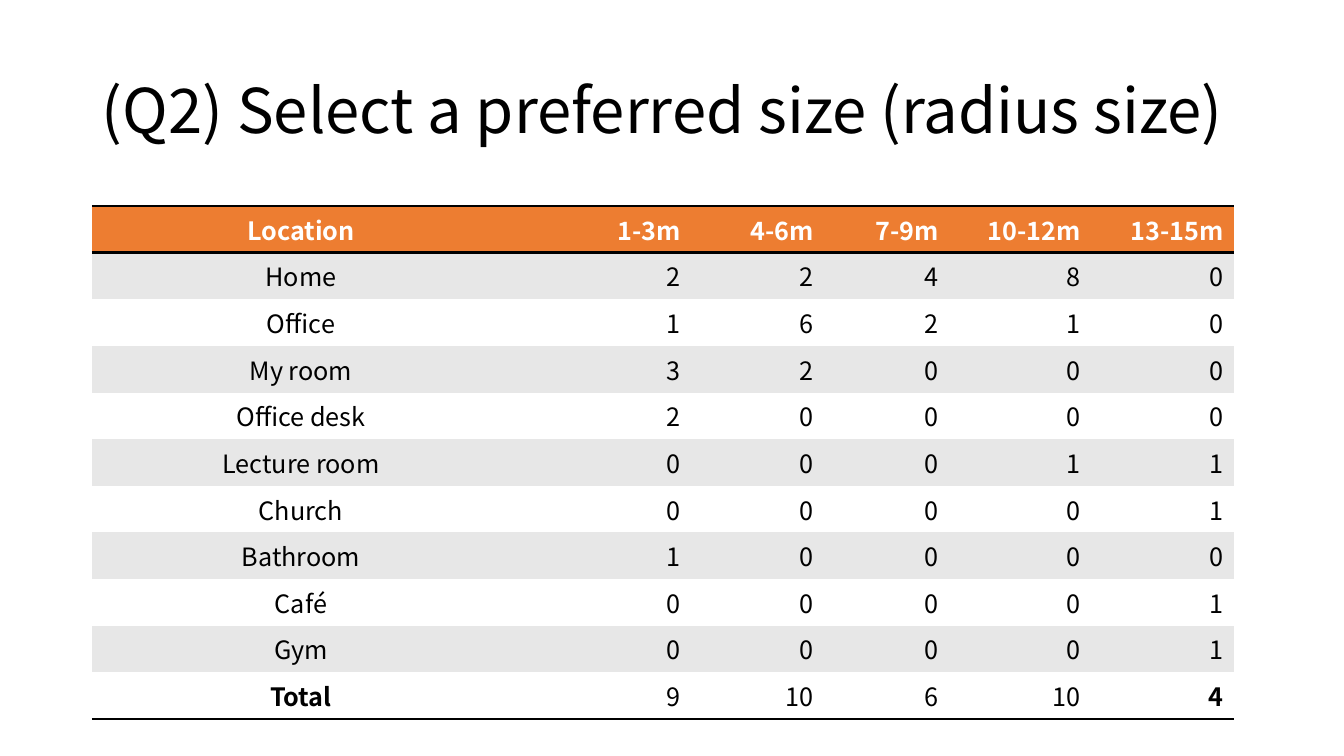
from lxml.etree import SubElement
from pptx import Presentation
from pptx.dml.color import RGBColor
from pptx.enum.text import MSO_ANCHOR, PP_ALIGN
from pptx.oxml.ns import qn
from pptx.util import Pt

EMU_PER_PX = 914400 / 100.8
FONT = "Noto Sans CJK KR"
BLACK, WHITE, ORANGE, GREY = "000000", "FFFFFF", "ED7D31", "E7E7E7"
PLAIN_TABLE_STYLE = "{2D5ABB26-0587-4C30-8999-92F81FD0307C}"

COLUMN_WIDTHS = [418, 181, 133, 125, 142, 143]
TABLE_HEIGHT = 513
ROWS = [
    ["Location", "1-3m", "4-6m", "7-9m", "10-12m", "13-15m"],
    ["Home", 2, 2, 4, 8, 0],
    ["Office", 1, 6, 2, 1, 0],
    ["My room", 3, 2, 0, 0, 0],
    ["Office desk", 2, 0, 0, 0, 0],
    ["Lecture room", 0, 0, 0, 1, 1],
    ["Church", 0, 0, 0, 0, 1],
    ["Bathroom", 1, 0, 0, 0, 0],
    ["Café", 0, 0, 0, 0, 1],
    ["Gym", 0, 0, 0, 0, 1],
    ["Total", 9, 10, 6, 10, 4],
]


def px(length):
    return round(length * EMU_PER_PX)


def color(value):
    return RGBColor.from_string(value)


def write(frame, text, size=18, fill=BLACK, bold=False, align=PP_ALIGN.LEFT, spacing=1.0):
    para = frame.paragraphs[0]
    para.alignment = align
    para.line_spacing = spacing
    span = para.add_run()
    span.text = text
    span.font.name = FONT
    span.font.size = Pt(size)
    span.font.bold = bold
    span.font.color.rgb = color(fill)


def add_title(page, text, left, top, width, height):
    box = page.shapes.add_textbox(px(left), px(top), px(width), px(height))
    box.text_frame.word_wrap = True
    box.text_frame.vertical_anchor = MSO_ANCHOR.MIDDLE
    write(box.text_frame, text, size=44, spacing=0.9)


def add_border(cell, side, width=2):
    line = SubElement(cell._tc.get_or_add_tcPr(), qn(f"a:ln{side}"), w=str(Pt(width)))
    SubElement(SubElement(line, qn("a:solidFill")), qn("a:srgbClr"), val=BLACK)


def fill_cell(cell, value, row, column):
    header, total = row == 0, row == len(ROWS) - 1
    last_column = column == len(COLUMN_WIDTHS) - 1
    if header:
        add_border(cell, "T")
    if header or total:
        add_border(cell, "B")
    cell.fill.solid()
    cell.fill.fore_color.rgb = color(ORANGE if header else GREY if row % 2 else WHITE)
    write(
        cell.text_frame,
        str(value),
        fill=WHITE if header else BLACK,
        bold=header or (total and (column == 0 or last_column)),
        align=PP_ALIGN.RIGHT if column else PP_ALIGN.CENTER,
    )


def add_size_table(page, left, top):
    frame = page.shapes.add_table(
        len(ROWS), len(COLUMN_WIDTHS), px(left), px(top),
        px(sum(COLUMN_WIDTHS)), px(TABLE_HEIGHT),
    )
    table = frame.table
    table._tbl.tblPr.find(qn("a:tableStyleId")).text = PLAIN_TABLE_STYLE
    for column, width in zip(table.columns, COLUMN_WIDTHS):
        column.width = px(width)
    for row, values in enumerate(ROWS):
        table.rows[row].height = px(TABLE_HEIGHT) // len(ROWS)
        for column, value in enumerate(values):
            fill_cell(table.cell(row, column), value, row, column)


def main():
    deck = Presentation()
    deck.slide_width, deck.slide_height = px(1344), px(756)
    page = deck.slides.add_slide(deck.slide_layouts[6])
    add_title(page, "(Q2) Select a preferred size (radius size)", 92, 41, 1159, 146)
    add_size_table(page, 92, 206)
    deck.save("out.pptx")


if __name__ == "__main__":
    main()
